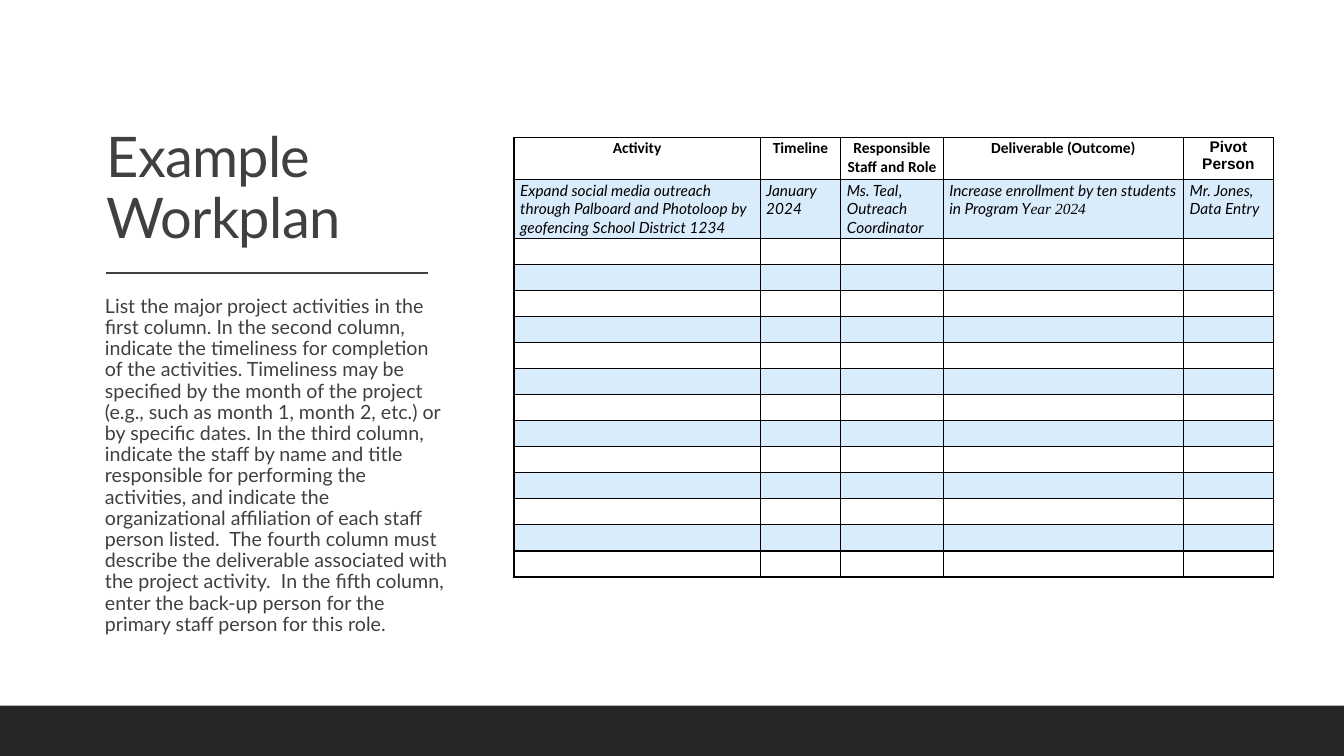
from lxml import etree
from pptx import Presentation, util as u
from pptx.dml.color import RGBColor
from pptx.enum import shapes, text
from pptx.oxml import ns

WHITE = RGBColor(0xFF, 0xFF, 0xFF)
BLACK = RGBColor(0, 0, 0)
GRAY = RGBColor(0x40, 0x40, 0x40)
CHARCOAL = RGBColor(0x26, 0x26, 0x26)
PALE_BLUE = RGBColor(0xD9, 0xEC, 0xFB)

COLUMNS, ROWS = 160, 90
WIDTH, HEIGHT = u.Inches(13.33), u.Inches(7.5)

TITLE = {"name": "Lato", "size": u.Pt(40)}
BODY = {"name": "Lato", "size": u.Pt(14)}
HEADER = {"name": "Calibri", "size": u.Pt(11), "bold": True}
ENTRY = {"name": "Lato", "size": u.Pt(11), "italic": True}
ARIAL_HEADER = {**HEADER, "name": "Arial"}
SERIF_ENTRY = {**ENTRY, "name": "Times New Roman"}

INSTRUCTIONS = (
    "List the major project activities in the first column. In the second column, "
    "indicate the timeliness for completion of the activities. Timeliness may be "
    "specified by the month of the project (e.g., such as month 1, month 2, etc.) or "
    "by specific dates. In the third column, indicate the staff by name and title "
    "responsible for performing the activities, and indicate the organizational "
    "affiliation of each staff person listed.  The fourth column must describe the "
    "deliverable associated with the project activity.  In the fifth column, enter the "
    "back-up person for the primary staff person for this role."
)
HEADERS = [
    [("Activity", HEADER)],
    [("Timeline", HEADER)],
    [("Responsible Staff and Role", HEADER)],
    [("Deliverable (Outcome)", HEADER)],
    [("Pivot Person", ARIAL_HEADER)],
]
EXAMPLE = [
    [("Expand social media outreach through Palboard and Photoloop by geofencing "
      "School District 1234", ENTRY)],
    [("January 2024", ENTRY)],
    [("Ms. Teal", ENTRY), (", ", SERIF_ENTRY), ("Outreach Coordinator", ENTRY)],
    [("Increase enrollment by ten students in Program Y", ENTRY),
     ("ear 2024", SERIF_ENTRY)],
    [("Mr. Jones, Data Entry", ENTRY)],
]
EMPTY_ROWS = 13
COLUMN_WIDTHS = [29.3, 9.6, 12.2, 28.6, 10.7]
ROW_HEIGHTS = [5, 7] + [3.1] * EMPTY_ROWS


def set_format(target, values):
    for name, value in values.items():
        setattr(target, name, value)


class WorkplanSlide:
    """Draw styled elements on one slide, placed by grid columns and rows."""

    def __init__(self, presentation):
        self.slide = presentation.slides.add_slide(presentation.slide_layouts[6])
        self.shapes = self.slide.shapes

    def x(self, columns):
        return u.Emu(round(WIDTH * columns / COLUMNS))

    def y(self, rows):
        return u.Emu(round(HEIGHT * rows / ROWS))

    def box(self, left, top, width, height):
        return self.x(left), self.y(top), self.x(width), self.y(height)

    def panel(self, place, color):
        shape = self.shapes.add_shape(shapes.MSO_SHAPE.RECTANGLE, *self.box(*place))
        shape.shadow.inherit = False
        shape.fill.solid()
        shape.fill.fore_color.rgb = color
        shape.line.fill.background()

    def rule(self, left, right, row):
        line = self.shapes.add_connector(
            shapes.MSO_CONNECTOR.STRAIGHT,
            self.x(left), self.y(row), self.x(right), self.y(row))
        line.line.color.rgb = GRAY
        line.line.width = u.Pt(1)
        etree.SubElement(line._element.spPr, ns.qn("a:effectLst"))

    def runs(self, paragraph, parts, color):
        for words, style in parts:
            run = paragraph.add_run()
            run.text = words
            set_format(run.font, style)
            run.font.color.rgb = color

    def textbox(self, place, words, style, frame_format, paragraph_format):
        frame = self.shapes.add_textbox(*self.box(*place)).text_frame
        set_format(frame, {"word_wrap": True, **frame_format})
        paragraph = frame.paragraphs[0]
        set_format(paragraph, {"line_spacing": 0.9, **paragraph_format})
        self.runs(paragraph, [(words, style)], GRAY)
        return paragraph

    def title(self, place, words):
        paragraph = self.textbox(
            place, words, TITLE, {"vertical_anchor": text.MSO_ANCHOR.BOTTOM}, {})
        paragraph.runs[0].font._element.set("spc", "-50")

    def body(self, place, words):
        paragraph = self.textbox(
            place, words, BODY, {"margin_left": 0, "margin_right": 0},
            {"space_before": u.Pt(12), "space_after": u.Pt(2)})
        properties = paragraph._p.get_or_add_pPr()
        properties.set("marL", str(u.Inches(0.1)))
        properties.set("indent", str(-u.Inches(0.1)))
        etree.SubElement(properties, ns.qn("a:buChar"), char=" ")

    def borders(self, cell):
        properties = cell._tc.get_or_add_tcPr()
        for side in ("lnL", "lnR", "lnT", "lnB"):
            line = etree.SubElement(properties, ns.qn(f"a:{side}"), w=str(u.Pt(1)))
            fill = etree.SubElement(line, ns.qn("a:solidFill"))
            etree.SubElement(fill, ns.qn("a:srgbClr"), val=str(BLACK))

    def cell(self, cell, parts, color, alignment):
        set_format(cell, {
            "margin_left": u.Inches(0.06), "margin_right": u.Inches(0.06),
            "margin_top": u.Inches(0.01), "margin_bottom": 0})
        self.borders(cell)
        cell.fill.solid()
        cell.fill.fore_color.rgb = color
        paragraph = cell.text_frame.paragraphs[0]
        paragraph.alignment = alignment
        self.runs(paragraph, parts, BLACK)
        if not parts:
            etree.SubElement(paragraph._p, ns.qn("a:endParaRPr"), sz="1100")

    def table(self, left, top, widths, heights, contents):
        place = self.box(left, top, sum(widths), sum(heights))
        table = self.shapes.add_table(len(heights), len(widths), *place).table
        set_format(table, {"first_row": False, "horz_banding": False})
        for column, width in zip(table.columns, widths):
            column.width = self.x(width)
        for row, height in zip(table.rows, heights):
            row.height = self.y(height)
        for number, row in enumerate(contents):
            color = PALE_BLUE if number % 2 else WHITE
            alignment = text.PP_ALIGN.LEFT if number else text.PP_ALIGN.CENTER
            for column, parts in enumerate(row):
                self.cell(table.cell(number, column), parts, color, alignment)


def main():
    presentation = Presentation()
    set_format(presentation, {"slide_width": WIDTH, "slide_height": HEIGHT})
    workplan = WorkplanSlide(presentation)
    workplan.panel((0, 0, COLUMNS, ROWS), WHITE)
    workplan.title((11.5, 8.4, 41.8, 22), "Example Workplan")
    workplan.rule(12.6, 51, 32.5)
    workplan.body((11.3, 34.7, 42.1, 42.4), INSTRUCTIONS)
    workplan.panel((0, 84, COLUMNS, 6), CHARCOAL)
    empty = [[[] for _ in COLUMN_WIDTHS] for _ in range(EMPTY_ROWS)]
    workplan.table(61.2, 16.4, COLUMN_WIDTHS, ROW_HEIGHTS, [HEADERS, EXAMPLE, *empty])
    presentation.save("out.pptx")


if __name__ == "__main__":
    main()
